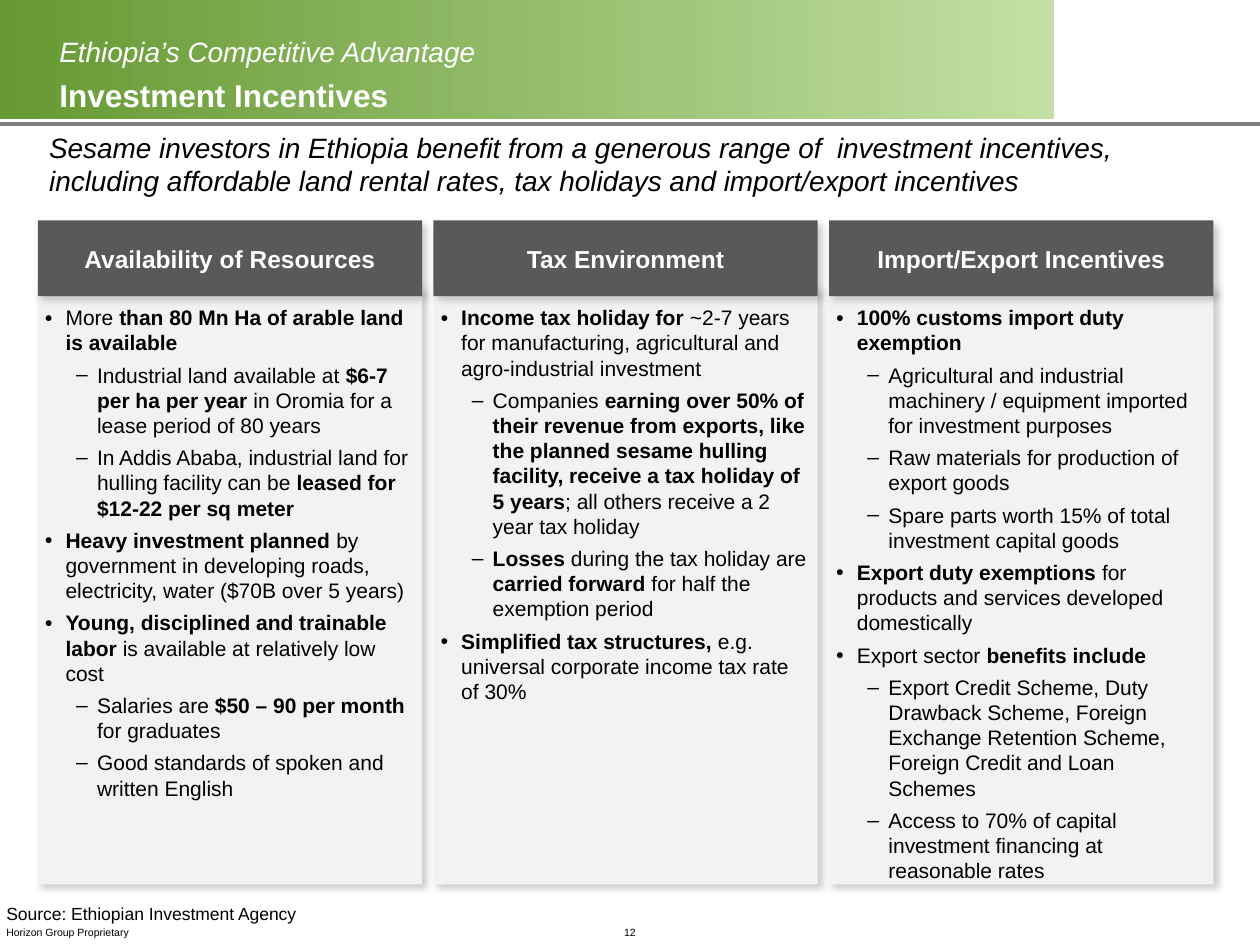
import lxml.etree
import pptx
import pptx.dml.color
import pptx.enum.shapes
import pptx.enum.text
import pptx.oxml
import pptx.oxml.ns
import pptx.util

Pt = pptx.util.Pt
SHAPE = pptx.enum.shapes.MSO_SHAPE
ANCHOR = pptx.enum.text.MSO_ANCHOR
ALIGN = pptx.enum.text.PP_ALIGN
FIT = pptx.enum.text.MSO_AUTO_SIZE
qn = pptx.oxml.ns.qn


def tint(color):
    return pptx.dml.color.RGBColor.from_string(color)


def write(shape, items, size, color="000000", anchor=ANCHOR.TOP, align=ALIGN.LEFT,
          wrap=True, bold=None, italic=None):
    """Write (level, text) items; level 0 has no bullet, ** switches bold."""
    frame = shape.text_frame
    frame.word_wrap = wrap
    frame.auto_size = FIT.NONE
    frame.vertical_anchor = anchor
    frame.margin_left = frame.margin_right = Pt(3.6)
    frame.margin_top = frame.margin_bottom = Pt(3.6)
    for i, (level, text) in enumerate(items):
        para = frame.paragraphs[0] if i == 0 else frame.add_paragraph()
        para.alignment = align
        if i:
            para.space_before = Pt(4)
        if level:
            para.level = level
            props = para._p.get_or_add_pPr()
            props.set("marL", str(Pt(18 * level)))
            props.set("indent", str(Pt(-12)))
            if level == 1:
                lxml.etree.SubElement(props, qn("a:buSzPct"), val="65000")
            mark = "●" if level == 1 else "–"
            lxml.etree.SubElement(props, qn("a:buFont"), typeface="Arial")
            lxml.etree.SubElement(props, qn("a:buChar"), char=mark)
        font = para.font
        font.name, font.size = "Arial", Pt(size)
        font.bold, font.italic = bold, italic
        font.color.rgb = tint(color)
        for j, part in enumerate(text.split("**")):
            if part:
                run = para.add_run()
                run.text = part
                if j % 2:
                    run.font.bold = True


columns = [
    ("Availability of Resources", 293, [
        (1, "More **than 80 Mn Ha of arable land is available**"),
        (2, "Industrial land available at **$6-7 per ha per year **in Oromia "
            "for a lease period of 80 years"),
        (2, "In Addis Ababa, industrial land for hulling facility can be "
            "**leased for $12-22 per sq meter**"),
        (1, "**Heavy investment planned **by government in developing roads, "
            "electricity, water ($70B over 5 years)"),
        (1, "**Young, disciplined and trainable labor **is available at "
            "relatively low cost"),
        (2, "Salaries are **$50 – 90 per month **for graduates"),
        (2, "Good standards of spoken and written English"),
    ]),
    ("Tax Environment", 237.6, [
        (1, "**Income tax holiday for **~2-7 years for manufacturing, "
            "agricultural and agro-industrial investment"),
        (2, "Companies **earning over 50% of their revenue from exports, like "
            "the planned sesame hulling facility, receive a tax holiday of "
            "5 years**; all others receive a 2 year tax holiday"),
        (2, "**Losses **during the tax holiday are **carried forward **for "
            "half the exemption period"),
        (1, "**Simplified tax structures, **e.g. universal corporate income "
            "tax rate of 30%"),
    ]),
    ("Import/Export Incentives", 326.2, [
        (1, "**100% customs import duty exemption**"),
        (2, "Agricultural and industrial machinery / equipment imported for "
            "investment purposes"),
        (2, "Raw materials for production of export goods"),
        (2, "Spare parts worth 15% of total investment capital goods"),
        (1, "**Export duty exemptions **for products and services developed "
            "domestically"),
        (1, "Export sector **benefits include**"),
        (2, "Export Credit Scheme, Duty Drawback Scheme, Foreign Exchange "
            "Retention Scheme, Foreign Credit and Loan Schemes"),
        (2, "Access to 70% of capital investment financing at reasonable rates"),
    ]),
]

deck = pptx.Presentation()
deck.slide_width, deck.slide_height = Pt(720), Pt(540)
slide = deck.slides.add_slide(deck.slide_layouts[5])
shapes = slide.shapes

# Title band and rule
band = shapes.add_shape(SHAPE.RECTANGLE, 0, 0, Pt(602.5), Pt(68))
band.shadow.inherit = False
band.line.fill.background()
band.fill.gradient()
band.fill.gradient_angle = 0
for stop, color in zip(band.fill.gradient_stops, ("669933", "C2E0A3")):
    stop.color.rgb = tint(color)

rule = shapes.add_connector(pptx.enum.shapes.MSO_CONNECTOR.STRAIGHT,
                            0, Pt(70.75), Pt(720), Pt(70.75))
rule.line.color.rgb = tint("808080")
rule.line.width = Pt(2.25)
lxml.etree.SubElement(rule._element.spPr, qn("a:effectLst"))

# Title, brought in front of the band
title = shapes.title
shapes._spTree.append(title._element)
title.left, title.top, title.width, title.height = Pt(30.3), Pt(3), Pt(566.7), Pt(62)
write(title, [(0, "Ethiopia’s Competitive Advantage")], 16, "FFFFFF", ANCHOR.BOTTOM)
title.text_frame.margin_top = title.text_frame.margin_bottom = 0
head = title.text_frame.paragraphs[0]
head.line_spacing = 1.2
head.runs[0].font.italic = True
head.add_line_break()
topic = head.add_run()
topic.text = "Investment Incentives"
topic.font.size, topic.font.bold = Pt(18), True

lead = shapes.add_textbox(Pt(24.5), Pt(70.8), Pt(670), Pt(46))
write(lead, [(0, "Sesame investors in Ethiopia benefit from a generous range of  "
                 "investment incentives, including affordable land rental rates, "
                 "tax holidays and import/export incentives")], 16, italic=True)

# Columns: a light card, its bullets, and a dark header
for i, (name, height, items) in enumerate(columns):
    left = 21.6 + 226.1 * i
    for top, tall, color in ((163.4, 342, "F2F2F2"), (126, 43.2, "595959")):
        card = shapes.add_shape(SHAPE.RECTANGLE, Pt(left), Pt(top), Pt(219.6), Pt(tall))
        card.fill.solid()
        card.fill.fore_color.rgb = tint(color)
        card.line.fill.background()
        card.shadow.inherit = False
        effects = card._element.spPr.find(qn("a:effectLst"))
        shade = lxml.etree.SubElement(effects, qn("a:outerShdw"), blurRad=str(Pt(4)),
                                      dist=str(Pt(3)), dir="2700000", algn="tl",
                                      rotWithShape="0")
        gray = lxml.etree.SubElement(shade, qn("a:srgbClr"), val="808080")
        lxml.etree.SubElement(gray, qn("a:alpha"), val="40000")
    write(card, [(0, name)], 14, "FFFFFF", ANCHOR.MIDDLE, ALIGN.CENTER, bold=True)
    body = shapes.add_textbox(Pt(left - 5.7), Pt(170.6), Pt(225.4), Pt(height))
    write(body, items, 12)

# Footer
source = shapes.add_textbox(0, Pt(499.7), Pt(686), Pt(31.7))
write(source, [(0, "Source: Ethiopian Investment Agency")], 10, anchor=ANCHOR.BOTTOM)
owner = shapes.add_textbox(0, Pt(525.6), Pt(78.5), Pt(14.4))
write(owner, [(0, "Horizon Group Proprietary")], 6, anchor=ANCHOR.BOTTOM, wrap=False)
page = shapes.add_textbox(Pt(352.8), Pt(525.6), Pt(14.4), Pt(14.4))
write(page, [(0, "12")], 6, anchor=ANCHOR.BOTTOM, align=ALIGN.CENTER, wrap=False)

deck.save("out.pptx")
